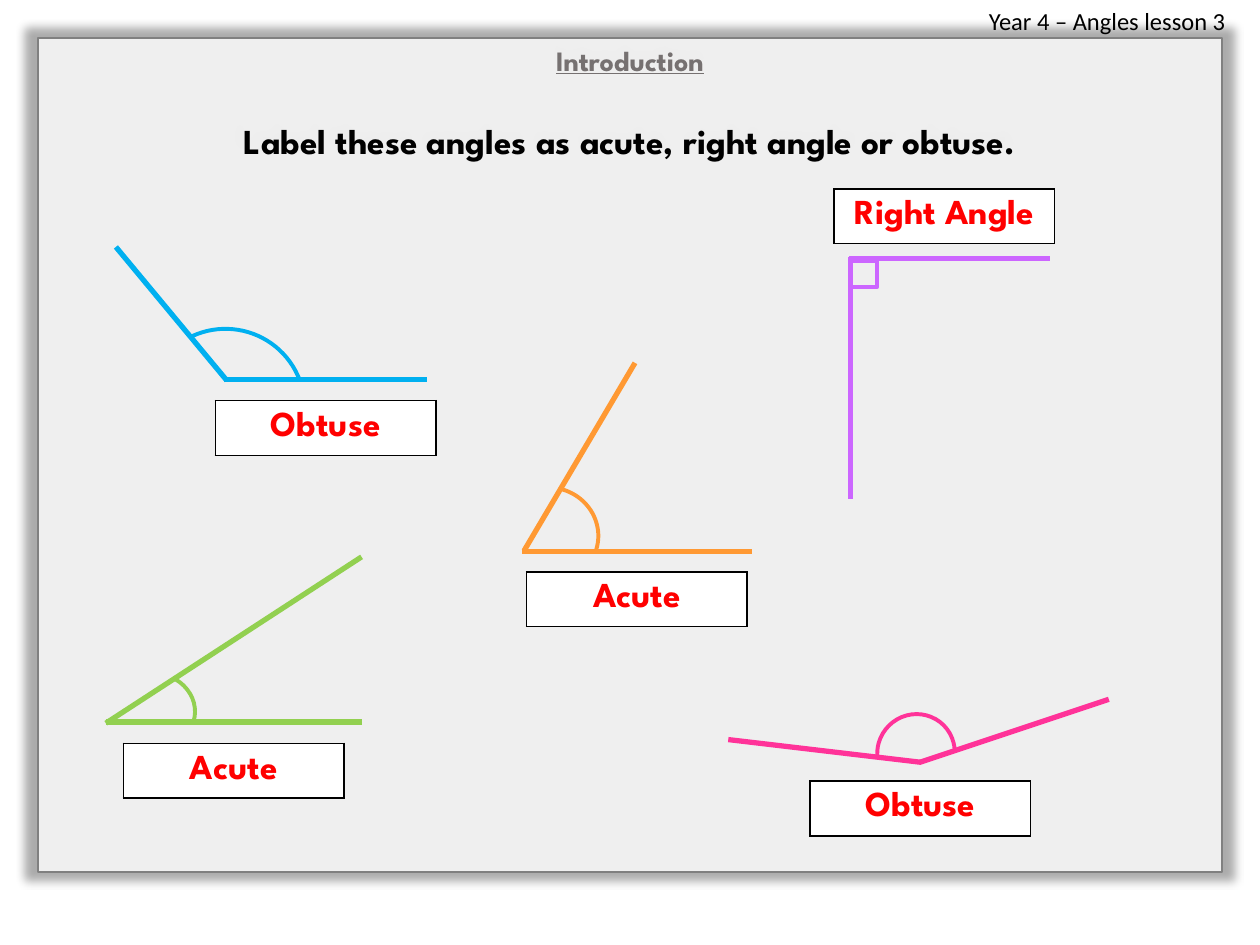
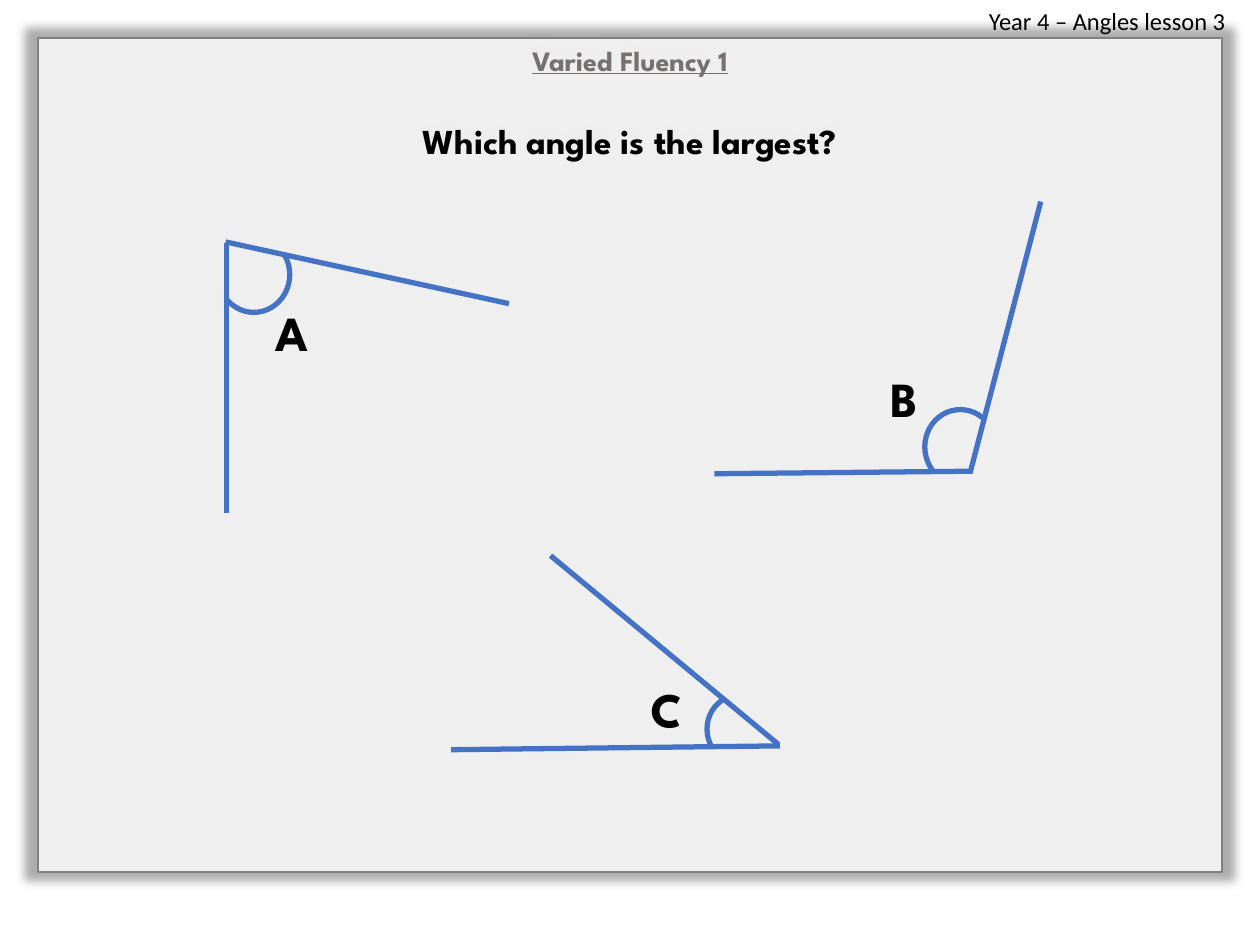
"""Build two lesson slides on naming and comparing angles."""
from dataclasses import dataclass

from lxml.etree import SubElement
from pptx import Presentation
from pptx.dml.color import RGBColor as Rgb
from pptx.enum.shapes import MSO_CONNECTOR as Connector
from pptx.enum.shapes import MSO_SHAPE as Preset
from pptx.enum.text import MSO_ANCHOR as Anchor
from pptx.enum.text import PP_ALIGN as Align
from pptx.oxml import parse_xml
from pptx.oxml.ns import nsdecls, qn
from pptx.util import Inches, Pt


@dataclass(frozen=True)
class Theme:
    white: str = "FFFFFF"
    black: str = "000000"
    edge: str = "808080"
    heading: str = "767171"
    answer: str = "FF0000"
    cyan: str = "00B0F0"
    green: str = "92D050"
    violet: str = "CC66FF"
    pink: str = "FF3399"
    orange: str = "FF9933"
    blue: str = "4472C4"
    body_font: str = "Calibri"
    display_font: str = "League Spartan"
    header_size: int = 14
    heading_size: int = 16
    question_size: int = 20
    letter_size: int = 28
    question_gap: int = 24
    ray_width: float = 3
    thin_width: float = 2.25


theme = Theme()
COLUMNS, ROWS = 100, 75
CELL = Inches(0.1)
HEADER = (77.5, 0, 21.6, 3.4)
PANEL = (3, 3, 94, 66.2)
LABEL_SIZE = (17.5, 4.3)
LETTER_SIZE = (4.9, 5.7)
WIDE_ARC = (196.89, 81.66)


def grid(*cells):
    return [round(cell * CELL) for cell in cells]


def write(para, text, size, colour, font=theme.display_font, bold=True, align=Align.CENTER):
    para.text = text
    para.alignment = align
    span = para.runs[0]
    span.font.name = font
    span.font.size = Pt(size)
    span.font.bold = bold
    span.font.color.rgb = Rgb.from_string(colour)
    return span


naming_angles = [
    (theme.cyan, [(18, 30.2, 9.2, 19.6), (17.8, 30.1, 33.9, 30.1)],
     (Preset.ARC, (11.6, 26.1, 12.6, 12.6), 335.4, (161.02, 1.6)), theme.thin_width),
    (theme.green, [(8.4, 57.4, 28.7, 44.2), (8.4, 57.3, 28.7, 57.3)],
     (Preset.ARC, (9.3, 53.5, 6.2, 5.7), 17.1, (169.72, 0)), theme.thin_width),
    (theme.violet, [(67.4, 20.5, 83.3, 20.5), (67.5, 20.4, 67.5, 39.6)],
     (Preset.RECTANGLE, (67.5, 20.7, 2.1, 2.1), 0, ()), theme.thin_width),
    (theme.pink, [(73.1, 60.5, 57.8, 58.7), (73, 60.5, 88, 55.5)],
     (Preset.ARC, (69.6, 56.7, 6.2, 6.1), 315.5, (129.83, 23.44)), theme.thin_width),
    (theme.orange, [(41.6, 43.7, 50.4, 28.8), (41.4, 43.8, 59.7, 43.8)],
     (Preset.ARC, (39.7, 38.7, 7.8, 7.5), 17.1, (159.89, 2.6)), theme.thin_width),
]
comparing_angles = [
    (theme.blue, [(18, 40.7, 18, 19.3), (17.9, 19.2, 40.4, 24.1)],
     (Preset.ARC, (17.3, 18.8, 5.7, 6), 0, WIDE_ARC), theme.ray_width),
    (theme.blue, [(82.6, 16, 77, 37.5), (77.2, 37.4, 56.7, 37.6)],
     (Preset.ARC, (73.4, 32.5, 5.7, 6), 172.7, WIDE_ARC), theme.ray_width),
    (theme.blue, [(43.7, 44.1, 61.8, 59.1), (61.9, 59.2, 35.8, 59.5)],
     (Preset.ARC, (56.2, 55, 5.7, 6), 129.2, (16.79, 64.57)), theme.ray_width),
]
answers = [("Obtuse", 17.1, 31.8), ("Right Angle", 66.2, 15), ("Acute", 41.8, 45.4),
           ("Acute", 9.8, 59), ("Obtuse", 64.3, 62)]
letters = [("A", 20.7, 23.5, 0), ("B", 69.3, 28.7, 0), ("C", 50.5, 53.4, 1.6)]
lessons = [
    ("Introduction", "Label these angles as acute, right angle or obtuse.",
     naming_angles, answers, []),
    ("Varied Fluency 1", "Which angle is the largest?", comparing_angles, [], letters),
]

deck = Presentation()
deck.slide_width, deck.slide_height = grid(COLUMNS, ROWS)

for heading, question, angles, labels, marks in lessons:
    page = deck.slides.add_slide(deck.slide_layouts[6])

    header = page.shapes.add_textbox(*grid(*HEADER))
    write(header.text_frame.paragraphs[0], "Year 4 – Angles lesson 3", theme.header_size,
          theme.black, theme.body_font, False, Align.LEFT)

    panel = page.shapes.add_shape(Preset.RECTANGLE, *grid(*PANEL))
    panel.fill.solid()
    panel.fill.fore_color.rgb = Rgb.from_string(theme.white)
    fill_colour = panel.fill._xPr.find(qn("a:solidFill"))[0]
    SubElement(fill_colour, qn("a:alpha"), val="82000")
    panel.line.color.rgb = Rgb.from_string(theme.edge)
    panel.line.width = Pt(1)
    panel._element.spPr.append(parse_xml(
        f'<a:effectLst {nsdecls("a")}><a:outerShdw blurRad="{Pt(5)}" sx="102000" sy="102000" '
        f'algn="ctr" rotWithShape="0"><a:srgbClr val="{theme.black}"><a:alpha val="40000"/>'
        '</a:srgbClr></a:outerShdw></a:effectLst>'))
    frame = panel.text_frame
    frame.word_wrap = True
    frame.vertical_anchor = Anchor.TOP
    title = write(frame.paragraphs[0], heading, theme.heading_size, theme.heading)
    title.font.underline = True
    para = frame.add_paragraph()
    para.space_before = Pt(theme.question_gap)
    write(para, question, theme.question_size, theme.black)

    for colour, rays, (preset, place, turn, sweep), width in angles:
        angle = page.shapes.add_group_shape()
        for ray in rays:
            line = angle.shapes.add_connector(Connector.STRAIGHT, *grid(*ray))
            line.line.color.rgb = Rgb.from_string(colour)
            line.line.width = Pt(theme.ray_width)
            SubElement(line._element.spPr, qn("a:effectLst"))
        marker = angle.shapes.add_shape(preset, *grid(*place))
        marker.rotation = turn
        for index, value in enumerate(sweep):
            marker.adjustments[index] = value
        marker.fill.background()
        marker.line.color.rgb = Rgb.from_string(colour)
        marker.line.width = Pt(width)
        marker.shadow.inherit = False

    for answer, left, top in labels:
        table = page.shapes.add_table(1, 1, *grid(left, top, *LABEL_SIZE)).table
        table.first_row = table.horz_banding = False
        cell = table.cell(0, 0)
        cell.vertical_anchor = Anchor.MIDDLE
        write(cell.text_frame.paragraphs[0], answer, theme.question_size, theme.answer)
        for side in "LRTB":
            cell._tc.get_or_add_tcPr().append(parse_xml(
                f'<a:ln{side} {nsdecls("a")} w="{Pt(1)}"><a:solidFill>'
                f'<a:srgbClr val="{theme.black}"/></a:solidFill></a:ln{side}>'))
        cell.fill.solid()
        cell.fill.fore_color.rgb = Rgb.from_string(theme.white)

    for letter, left, top, turn in marks:
        box = page.shapes.add_textbox(*grid(left, top, *LETTER_SIZE))
        box.rotation = turn
        box.text_frame.word_wrap = True
        box.text_frame.vertical_anchor = Anchor.MIDDLE
        write(box.text_frame.paragraphs[0], letter, theme.letter_size, theme.black)

deck.save("out.pptx")
